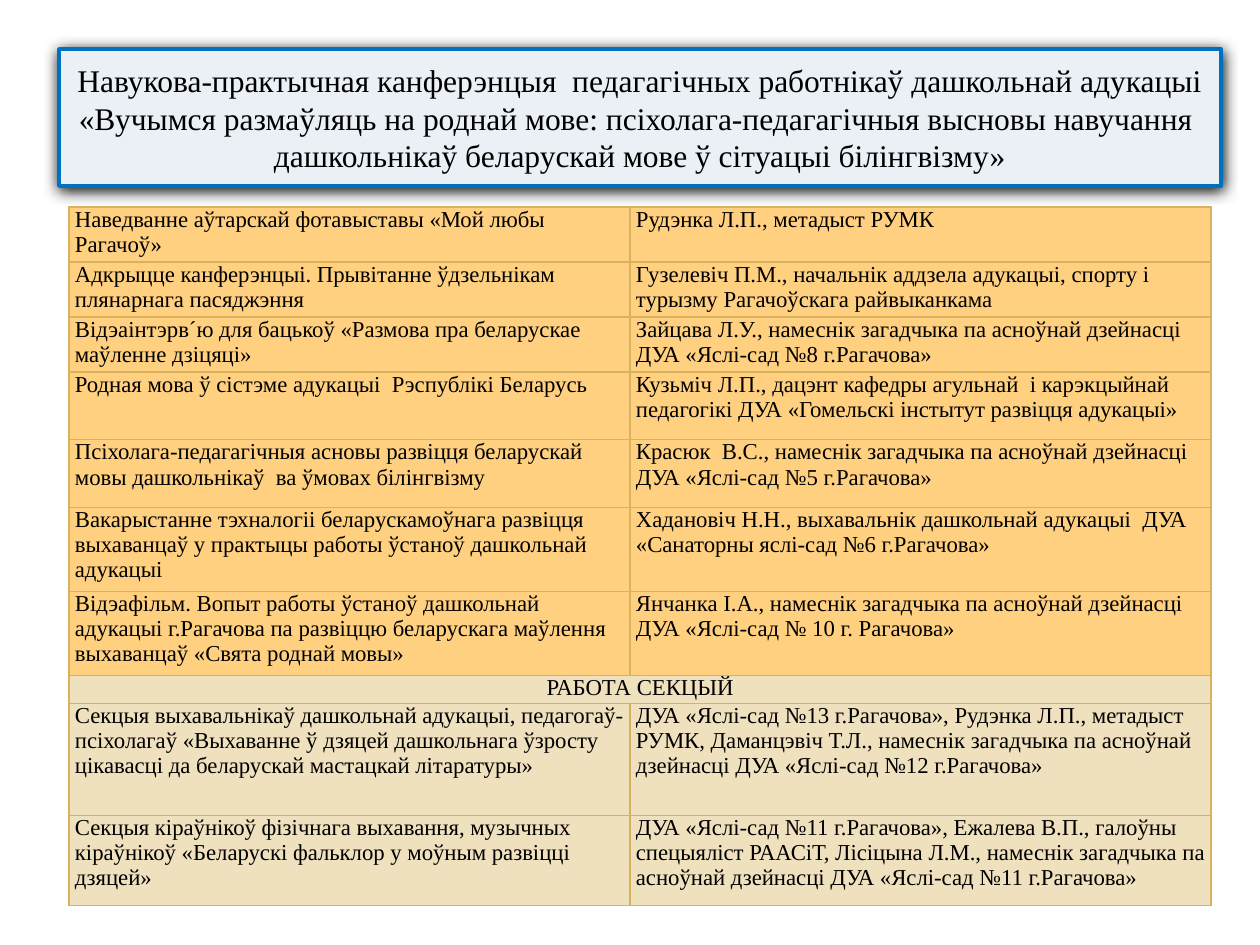
import pptx
import pptx.util
import pptx.dml.color
import pptx.enum.text
import pptx.oxml
import pptx.oxml.ns
from dataclasses import dataclass


@dataclass(frozen=True)
class Theme:
    font: str = "Times New Roman"
    title_size: int = 18
    body_size: int = 13
    ink: str = "000000"
    banner: str = "EAF0F6"
    banner_edge: str = "0070C0"
    plenary: str = "FFD07F"
    sections: str = "EFE0BE"
    grid: str = "D8B25C"


theme = Theme()
rgb = pptx.dml.color.RGBColor.from_string
center = pptx.enum.text.PP_ALIGN.CENTER
middle = pptx.enum.text.MSO_ANCHOR.MIDDLE
A = pptx.oxml.ns.nsdecls("a")


def px(n):
    return pptx.util.Emu(round(n * 914400 / 126))


def write(frame, text, size, align=None):
    paragraph = frame.paragraphs[0]
    paragraph.alignment = align
    run = paragraph.add_run()
    run.text = text
    run.font.name = theme.font
    run.font.size = pptx.util.Pt(size)
    run.font.color.rgb = rgb(theme.ink)


plenary = [
    (55, "Наведванне аўтарскай фотавыставы «Мой любы Рагачоў»",
     "Рудэнка Л.П., метадыст РУМК"),
    (55, "Адкрыцце канферэнцыі. Прывітанне ўдзельнікам плянарнага пасяджэння",
     "Гузелевіч П.М., начальнік аддзела адукацыі, спорту і турызму Рагачоўскага райвыканкама"),
    (55, "Відэаінтэрв´ю для бацькоў «Размова пра беларускае маўленне дзіцяці»",
     "Зайцава Л.У., намеснік загадчыка па асноўнай дзейнасці ДУА «Яслі-сад №8 г.Рагачова»"),
    (68, "Родная мова ў сістэме адукацыі  Рэспублікі Беларусь",
     "Кузьміч Л.П., дацэнт кафедры агульнай  і карэкцыйнай педагогікі "
     "ДУА «Гомельскі інстытут развіцця адукацыі»"),
    (68, "Псіхолага-педагагічныя асновы развіцця беларускай мовы дашкольнікаў  ва ўмовах білінгвізму",
     "Красюк  В.С., намеснік загадчыка па асноўнай дзейнасці ДУА «Яслі-сад №5 г.Рагачова»"),
    (84, "Вакарыстанне тэхналогіі беларускамоўнага развіцця выхаванцаў "
     "у практыцы работы ўстаноў дашкольнай адукацыі",
     "Хадановіч Н.Н., выхавальнік дашкольнай адукацыі  ДУА «Санаторны яслі-сад №6 г.Рагачова»"),
    (84, "Відэафільм. Вопыт работы ўстаноў дашкольнай адукацыі г.Рагачова "
     "па развіццю беларускага маўлення выхаванцаў «Свята роднай мовы»",
     "Янчанка І.А., намеснік загадчыка па асноўнай дзейнасці ДУА «Яслі-сад № 10 г. Рагачова»"),
]
sections = [
    (28, "РАБОТА СЕКЦЫЙ", None),
    (112, "Секцыя выхавальнікаў дашкольнай адукацыі, педагогаў-псіхолагаў «Выхаванне ў дзяцей "
     "дашкольнага ўзросту цікавасці да беларускай мастацкай літаратуры»",
     "ДУА «Яслі-сад №13 г.Рагачова», Рудэнка Л.П., метадыст РУМК, Даманцэвіч Т.Л., "
     "намеснік загадчыка па асноўнай дзейнасці ДУА «Яслі-сад №12 г.Рагачова»"),
    (90, "Секцыя кіраўнікоў фізічнага выхавання, музычных кіраўнікоў "
     "«Беларускі фальклор у моўным развіцці дзяцей»",
     "ДУА «Яслі-сад №11 г.Рагачова», Ежалева В.П., галоўны спецыяліст РААСіТ, Лісіцына Л.М., "
     "намеснік загадчыка па асноўнай дзейнасці ДУА «Яслі-сад №11 г.Рагачова»"),
]
programme = [(theme.plenary, *row) for row in plenary] + [(theme.sections, *row) for row in sections]

prs = pptx.Presentation()
prs.slide_width = px(1260)
prs.slide_height = px(945)
slide = prs.slides.add_slide(prs.slide_layouts[5])

conference = slide.shapes.title
conference.left, conference.top, conference.width, conference.height = map(px, (59, 49, 1162, 137))
conference_props = conference._element.spPr
conference_props.append(pptx.oxml.parse_xml(f'<a:prstGeom {A} prst="roundRect"><a:avLst/></a:prstGeom>'))
conference.fill.solid()
conference.fill.fore_color.rgb = rgb(theme.banner)
conference.line.color.rgb = rgb(theme.banner_edge)
conference.line.width = pptx.util.Pt(2)
conference_props.append(pptx.oxml.parse_xml(
    f'<a:effectLst {A}><a:outerShdw blurRad="{pptx.util.Pt(8.5)}" dist="{pptx.util.Pt(1)}" '
    f'dir="5400000" rotWithShape="0"><a:srgbClr val="{theme.ink}"/></a:outerShdw></a:effectLst>'))
conference.text_frame.word_wrap = True
conference.text_frame.auto_size = pptx.enum.text.MSO_AUTO_SIZE.NONE
conference.text_frame.vertical_anchor = middle
write(conference.text_frame,
      "Навукова-практычная канферэнцыя  педагагічных работнікаў дашкольнай адукацыі "
      "«Вучымся размаўляць на роднай мове: псіхолага-педагагічныя высновы навучання  "
      "дашкольнікаў беларускай мове ў сітуацыі білінгвізму»", theme.title_size, center)

column_widths = (561, 581)
schedule = slide.shapes.add_table(
    len(programme), len(column_widths), px(69), px(207),
    px(sum(column_widths)), px(sum(row[1] for row in programme))).table
schedule.first_row = False
schedule.horz_banding = False
for column, width in zip(schedule.columns, column_widths):
    column.width = px(width)

for r, (fill, height, topic, speaker) in enumerate(programme):
    schedule.rows[r].height = px(height)
    if speaker is None:
        schedule.cell(r, 0).merge(schedule.cell(r, 1))
    for c, text in enumerate((topic, speaker)):
        cell = schedule.cell(r, c)
        cell.margin_left = cell.margin_right = px(6)
        cell.margin_top = cell.margin_bottom = 0
        cell.fill.solid()
        cell.fill.fore_color.rgb = rgb(fill)
        cell_props = cell._tc.get_or_add_tcPr()
        for i, side in enumerate("LRTB"):
            cell_props.insert(i, pptx.oxml.parse_xml(
                f'<a:ln{side} {A} w="{pptx.util.Pt(0.79)}"><a:solidFill>'
                f'<a:srgbClr val="{theme.grid}"/></a:solidFill></a:ln{side}>'))
        if text:
            write(cell.text_frame, text, theme.body_size, None if speaker else center)

prs.save("out.pptx")
